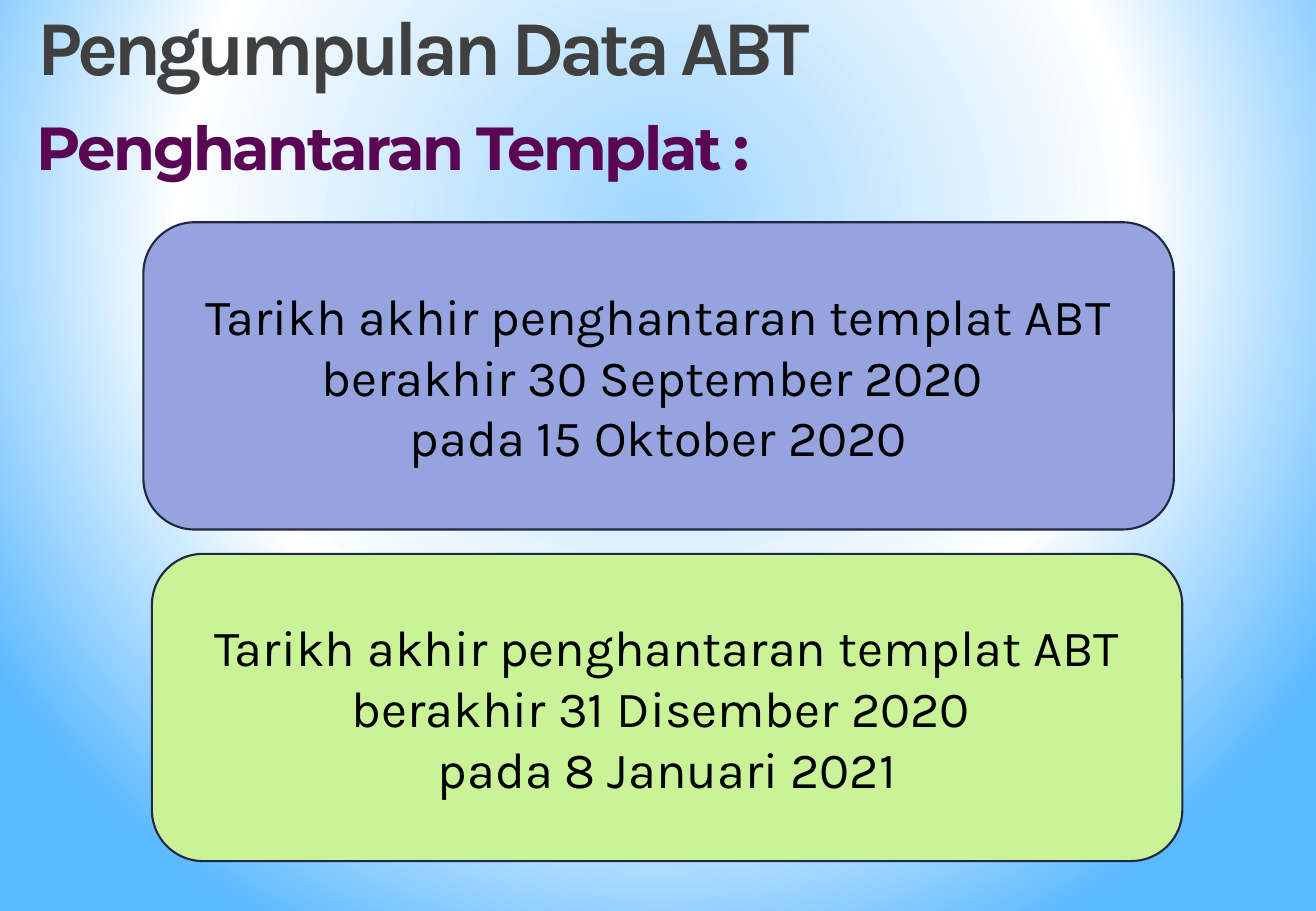
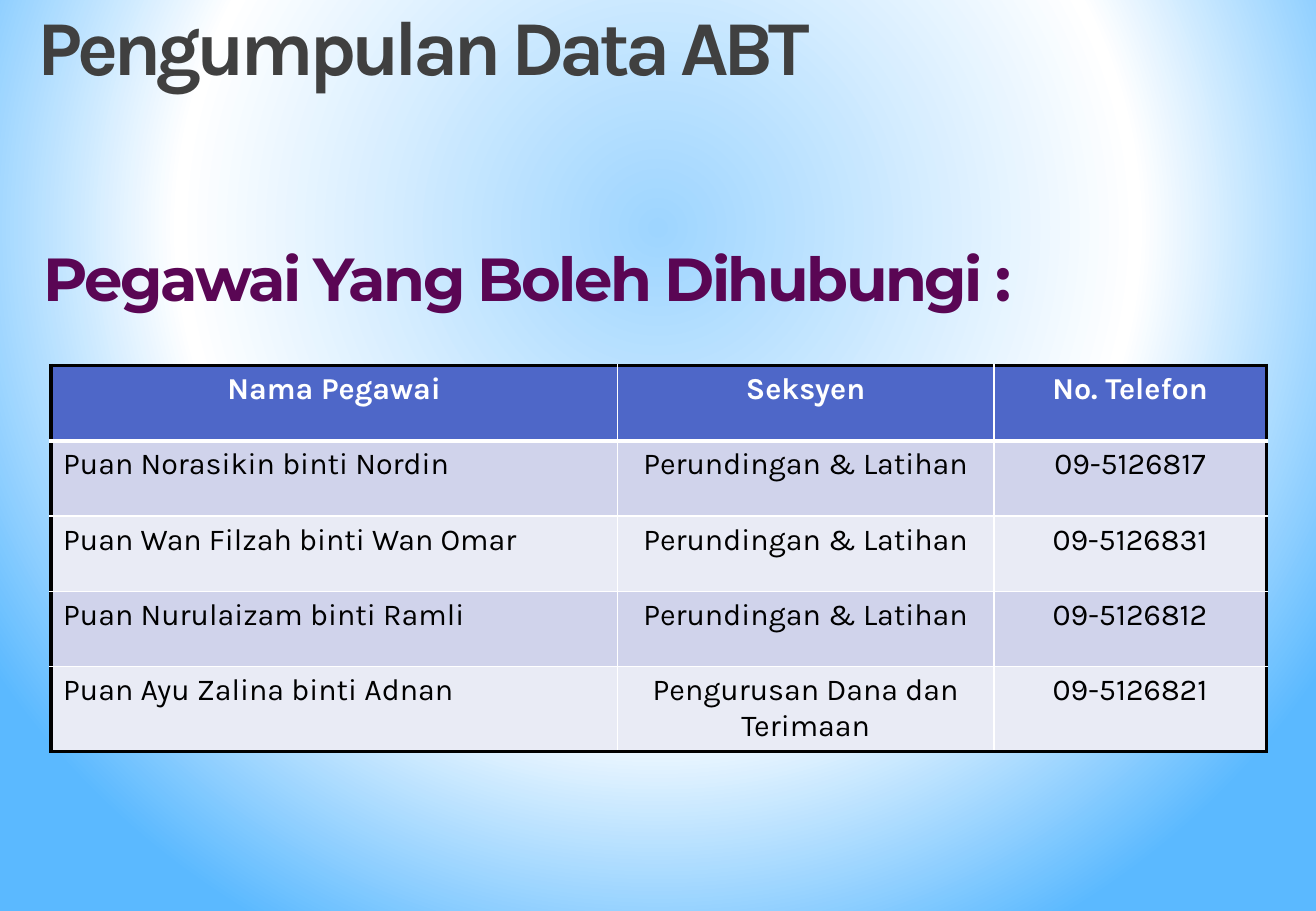
from pptx import Presentation
from pptx.dml.color import RGBColor
from pptx.enum.shapes import MSO_SHAPE
from pptx.enum.text import MSO_ANCHOR, MSO_AUTO_SIZE, PP_ALIGN
from pptx.oxml import parse_xml
from pptx.oxml.ns import nsdecls, qn
from pptx.util import Emu, Pt

ROUNDED = MSO_SHAPE.ROUNDED_RECTANGLE
MIDDLE = MSO_ANCHOR.MIDDLE
GROW = MSO_AUTO_SIZE.SHAPE_TO_FIT_TEXT
LEFT = PP_ALIGN.LEFT
CENTER = PP_ALIGN.CENTER

EMU_PER_PX = 9144
WIDTH, HEIGHT = 1083, 750

BODY_FONT = "Karla"
HEADING_FONT = "Montserrat"
BLACK, WHITE = "000000", "FFFFFF"
TITLE_GREY, PURPLE, NAVY = "404040", "5A0654", "212745"
LAVENDER, LIME = "95A4DE", "CAF297"
HEADER_BLUE = "4E67C8"
BANDS = ("D0D3EB", "E9EBF5")
BACKDROP_STOPS = ((0, "9ED5FF"), (60, "FFFFFF"), (100, "5BB9FF"))

OUTER_EDGE = (BLACK, 2.25)
INNER_EDGE = (WHITE, 1)
HEADER_EDGE = (WHITE, 3)


def px(*lengths):
    return [Emu(length * EMU_PER_PX) for length in lengths]


def color(value):
    return RGBColor.from_string(value)


class Deck:
    def __init__(self):
        self.presentation = Presentation()
        self.presentation.slide_width, self.presentation.slide_height = px(WIDTH, HEIGHT)
        self.slide = None
        self.paint_backdrop()

    def paint_backdrop(self):
        master = self.presentation.slide_master
        master.background.fill.solid()
        stops = "".join(
            f'<a:gs pos="{position * 1000}"><a:srgbClr val="{value}"/></a:gs>'
            for position, value in BACKDROP_STOPS
        )
        gradient = parse_xml(
            f'<a:gradFill {nsdecls("a")} rotWithShape="1"><a:gsLst>{stops}</a:gsLst>'
            '<a:path path="circle"><a:fillToRect l="20000" t="10000" r="20000" b="60000"/>'
            "</a:path></a:gradFill>"
        )
        solid = master.element.find(".//" + qn("a:solidFill"))
        solid.getparent().replace(solid, gradient)

    def add_slide(self):
        self.slide = self.presentation.slides.add_slide(self.presentation.slide_layouts[6])
        self.heading("Pengumpulan Data ABT", 31, 15, 60, BODY_FONT, 46, TITLE_GREY, 42.2, -3, before=1)

    def add_run(self, paragraph, text, size, value, font=BODY_FONT, bold=False):
        run = paragraph.add_run()
        run.text = text
        run.font.name = font
        run.font.size = Pt(size)
        run.font.bold = bold
        run.font.color.rgb = color(value)
        return run

    def heading(self, text, left, top, height, font, size, value, line, tracking, before=0, indent=0):
        box = self.slide.shapes.add_textbox(*px(left, top, 1030, height))
        frame = box.text_frame
        frame.word_wrap = True
        frame.auto_size = GROW
        frame.margin_left, frame.margin_top, frame.margin_right, frame.margin_bottom = px(0, 1, 0, 0)
        paragraph = frame.paragraphs[0]
        paragraph.line_spacing = Pt(line)
        paragraph.space_before = Pt(before)
        properties = paragraph._p.get_or_add_pPr()
        properties.set("marL", str(indent * EMU_PER_PX))
        properties.set("indent", "0")
        run = self.add_run(paragraph, text, size, value, font, bold=True)
        run._r.get_or_add_rPr().set("spc", str(int(tracking * 100)))

    def subtitle(self, text, left, top):
        self.heading(text, left, top, 39, HEADING_FONT, 36, PURPLE, 23.1, -1.5, indent=3)

    def card(self, lines, left, top, fill):
        shape = self.slide.shapes.add_shape(ROUNDED, *px(left, top, 848, 253))
        shape.shadow.inherit = False
        shape.fill.solid()
        shape.fill.fore_color.rgb = color(fill)
        shape.line.color.rgb = color(NAVY)
        shape.line.width = Pt(1.25)
        frame = shape.text_frame
        frame.word_wrap = True
        frame.vertical_anchor = MIDDLE
        for index, text in enumerate(lines):
            paragraph = frame.add_paragraph() if index else frame.paragraphs[0]
            paragraph.alignment = CENTER
            self.add_run(paragraph, text, 30, BLACK)

    def set_borders(self, cell, edges):
        properties = cell._tc.get_or_add_tcPr()
        for side, (value, width) in zip("LRTB", edges):
            properties.append(parse_xml(
                f'<a:ln{side} {nsdecls("a")} w="{Pt(width)}"><a:solidFill>'
                f'<a:srgbClr val="{value}"/></a:solidFill></a:ln{side}>'
            ))

    def table(self, rows, left, top, widths, row_height):
        last_row, last_column = len(rows) - 1, len(widths) - 1
        frame = self.slide.shapes.add_table(
            len(rows), len(widths), *px(left, top, sum(widths), row_height * len(rows))
        )
        table = frame.table
        for column, width in zip(table.columns, px(*widths)):
            column.width = width
        horizontal = [OUTER_EDGE, HEADER_EDGE] + [INNER_EDGE] * (last_row - 1) + [OUTER_EDGE]
        vertical = [OUTER_EDGE] + [INNER_EDGE] * last_column + [OUTER_EDGE]
        for r, texts in enumerate(rows):
            header = r == 0
            for c, text in enumerate(texts):
                cell = table.cell(r, c)
                self.set_borders(cell, (vertical[c], vertical[c + 1], horizontal[r], horizontal[r + 1]))
                cell.fill.solid()
                cell.fill.fore_color.rgb = color(HEADER_BLUE if header else BANDS[(r - 1) % 2])
                paragraph = cell.text_frame.paragraphs[0]
                paragraph.alignment = CENTER if header or c else LEFT
                self.add_run(paragraph, text, 18, WHITE if header else BLACK, bold=header)


def main():
    deck = Deck()

    deck.add_slide()
    deck.subtitle("Penghantaran Templat :", 27, 117)
    deadlines = (
        ("30 September 2020", "15 Oktober 2020", 118, 183, LAVENDER),
        ("31 Disember 2020", "8 Januari 2021", 125, 456, LIME),
    )
    for period_end, due, left, top, fill in deadlines:
        lines = (f"Tarikh akhir penghantaran templat ABT berakhir {period_end} ", f"pada {due}")
        deck.card(lines, left, top, fill)

    deck.add_slide()
    officers = (
        ("Nama Pegawai", "Seksyen", "No. Telefon"),
        ("Puan Norasikin binti Nordin", "Perundingan & Latihan", "09-5126817"),
        ("Puan Wan Filzah binti Wan Omar", "Perundingan & Latihan", "09-5126831"),
        ("Puan Nurulaizam binti Ramli", "Perundingan & Latihan", "09-5126812"),
        ("Puan Ayu Zalina binti Adnan", "Pengurusan Dana dan Terimaan", "09-5126821"),
    )
    deck.table(officers, 42, 301, (466, 310, 224), 62)
    deck.subtitle("Pegawai Yang Boleh Dihubungi :", 33, 225)

    deck.presentation.save("out.pptx")


if __name__ == "__main__":
    main()
